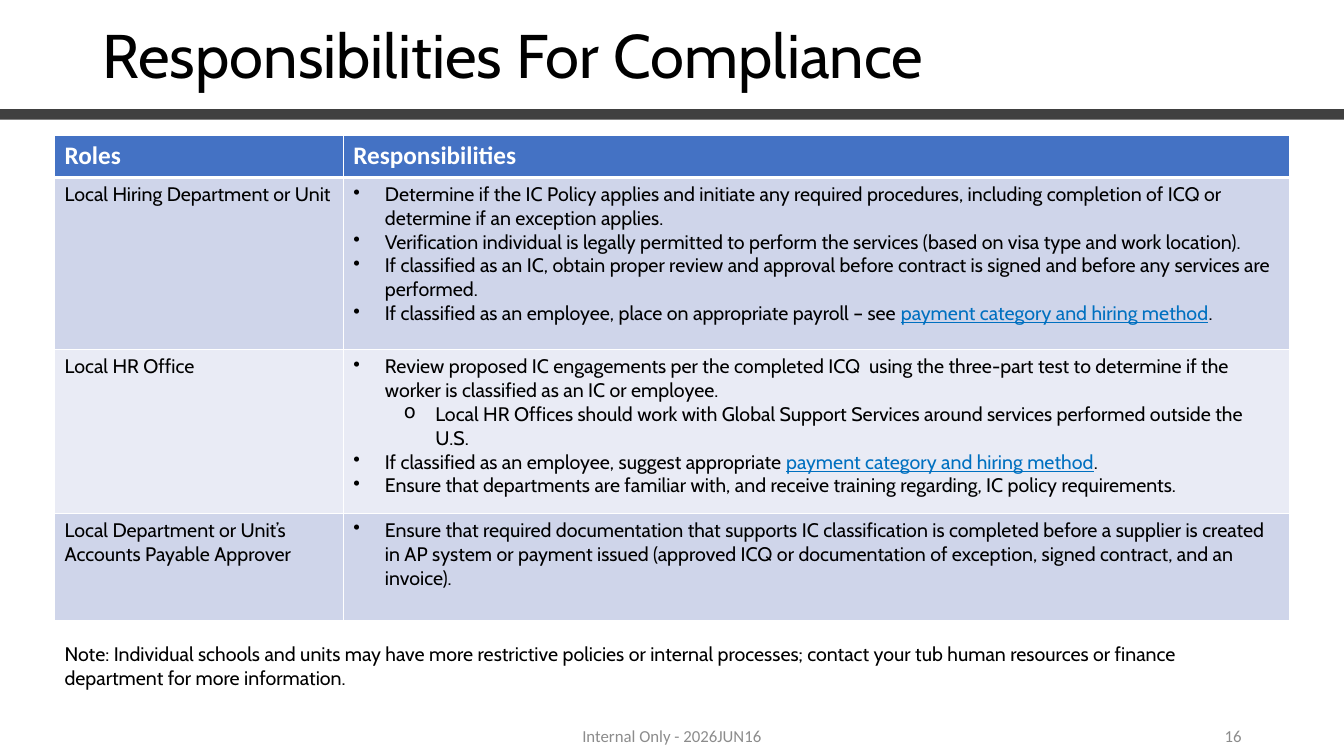
from lxml.etree import SubElement
from pptx import Presentation
from pptx.dml.color import RGBColor
from pptx.enum.shapes import MSO_SHAPE
from pptx.enum.text import MSO_ANCHOR, PP_ALIGN
from pptx.oxml.ns import qn
from pptx.util import Pt

PX = 9525
COLORS = {
    "ink": "000000", "white": "FFFFFF", "bar": "404040", "footer": "8C8C8C",
    "header": "4472C4", "band_dark": "CFD5EA", "band_light": "E9EBF5", "link": "0070C0",
}
COLUMN_WIDTHS = [275, 901]
ROW_HEIGHTS = [40, 164, 156, 102]
BULLETS = [("•", 30), ("o", 78)]
HANGING = 30
LINK = "payment category and hiring method"

HEADINGS = ["Roles", "Responsibilities"]
# Each duty is its outline level followed by its text parts.
ROLES = [
    ("Local Hiring Department or Unit", [
        (0, "Determine if the IC Policy applies and initiate any required procedures, "
            "including completion of ICQ or determine if an exception applies."),
        (0, "Verification individual is legally permitted to perform the services "
            "(based on visa type and work location)."),
        (0, "If classified as an IC, obtain proper review and approval before contract "
            "is signed and before any services are performed."),
        (0, "If classified as an employee, place on appropriate payroll – see ", LINK, "."),
    ]),
    ("Local HR Office", [
        (0, "Review proposed IC engagements per the completed ICQ  using the three-part test "
            "to determine if the worker is classified as an IC or employee."),
        (1, "Local HR Offices should work with Global Support Services around services "
            "performed outside the U.S."),
        (0, "If classified as an employee, suggest appropriate ", LINK, "."),
        (0, "Ensure that departments are familiar with, and receive training regarding, "
            "IC policy requirements."),
    ]),
    ("Local Department or Unit’s Accounts Payable Approver", [
        (0, "Ensure that required documentation that supports IC classification is completed "
            "before a supplier is created in AP system or payment issued (approved ICQ or "
            "documentation of exception, signed contract, and an invoice)."),
    ]),
]
NOTE = ("Note: Individual schools and units may have more restrictive policies or internal "
        "processes; contact your tub human resources or finance department for more information.")


def emu(*lengths):
    return [length * PX for length in lengths]


def rgb(name):
    return RGBColor.from_string(COLORS[name])


def add_text(para, text, size=14, font="Cabin", color="ink", bold=False, underline=False):
    span = para.add_run()
    span.text = text
    span.font.size = Pt(size)
    span.font.name = font
    span.font.color.rgb = rgb(color)
    span.font.bold = bold
    span.font.underline = underline


def add_text_box(page, box, text, align=PP_ALIGN.LEFT, anchor=MSO_ANCHOR.TOP, **text_format):
    frame = page.shapes.add_textbox(*emu(*box)).text_frame
    frame.word_wrap = True
    frame.vertical_anchor = anchor
    para = frame.paragraphs[0]
    para.alignment = align
    add_text(para, text, **text_format)


def set_bullet(para, level):
    symbol, margin = BULLETS[level]
    para.level = level
    properties = para._p.get_or_add_pPr()
    properties.set("marL", str(margin * PX))
    properties.set("indent", str(-HANGING * PX))
    SubElement(properties, qn("a:buChar")).set("char", symbol)


def style_cell(cell, fill, top=1, bottom=1):
    """Border widths are in points; borders must come before the fill."""
    properties = cell._tc.get_or_add_tcPr()
    for side, width in {"L": 1, "R": 1, "T": top, "B": bottom}.items():
        line = SubElement(properties, qn(f"a:ln{side}"), w=str(Pt(width)))
        solid = SubElement(line, qn("a:solidFill"))
        SubElement(solid, qn("a:srgbClr"), val=COLORS["white"])
    cell.fill.solid()
    cell.fill.fore_color.rgb = rgb(fill)


def add_duties(frame, duties):
    for index, (level, *parts) in enumerate(duties):
        para = frame.add_paragraph() if index else frame.paragraphs[0]
        set_bullet(para, level)
        for part in parts:
            is_link = part == LINK
            add_text(para, part, color="link" if is_link else "ink", underline=is_link)


def add_title(page, box, text):
    title = page.shapes.title
    title.left, title.top, title.width, title.height = emu(*box)
    title.text_frame.vertical_anchor = MSO_ANCHOR.MIDDLE
    para = title.text_frame.paragraphs[0]
    para.alignment = PP_ALIGN.LEFT
    para.line_spacing = 0.9
    add_text(para, text, size=44)


def add_bar(page, box):
    bar = page.shapes.add_shape(MSO_SHAPE.RECTANGLE, *emu(*box))
    bar.shadow.inherit = False
    bar.fill.solid()
    bar.fill.fore_color.rgb = rgb("bar")
    bar.line.fill.background()


def add_roles_table(page, left, top):
    box = left, top, sum(COLUMN_WIDTHS), sum(ROW_HEIGHTS)
    table = page.shapes.add_table(len(ROW_HEIGHTS), len(COLUMN_WIDTHS), *emu(*box)).table
    for column, width in zip(table.columns, emu(*COLUMN_WIDTHS)):
        column.width = width
    for row, height in zip(table.rows, emu(*ROW_HEIGHTS)):
        row.height = height

    for column, heading in enumerate(HEADINGS):
        cell = table.cell(0, column)
        style_cell(cell, "header", bottom=3)
        add_text(cell.text_frame.paragraphs[0], heading,
                 size=18, font="Calibri", color="white", bold=True)

    for row, (role, duties) in enumerate(ROLES, start=1):
        for cell in table.rows[row].cells:
            style_cell(cell, "band_dark" if row % 2 else "band_light", top=3 if row == 1 else 1)
        add_text(table.cell(row, 0).text_frame.paragraphs[0], role)
        add_duties(table.cell(row, 1).text_frame, duties)


def add_footer(page, top, height):
    footer_format = dict(anchor=MSO_ANCHOR.MIDDLE, size=12, font="Calibri", color="footer")
    add_text_box(page, (424, top, 432, height), "Internal Only - 2026JUN16",
                 align=PP_ALIGN.CENTER, **footer_format)
    add_text_box(page, (904, top, 288, height), "16", align=PP_ALIGN.RIGHT, **footer_format)


def main():
    deck = Presentation()
    deck.slide_width, deck.slide_height = emu(1280, 720)
    page = deck.slides.add_slide(deck.slide_layouts.get_by_name("Title Only"))
    add_bar(page, (0, 104, 1280, 10))
    add_title(page, (88, 3, 1104, 106), "Responsibilities For Compliance")
    add_roles_table(page, 52, 129)
    add_text_box(page, (52, 607, 1176, 81), NOTE)
    add_footer(page, 682, 38)
    deck.save("out.pptx")


if __name__ == "__main__":
    main()
